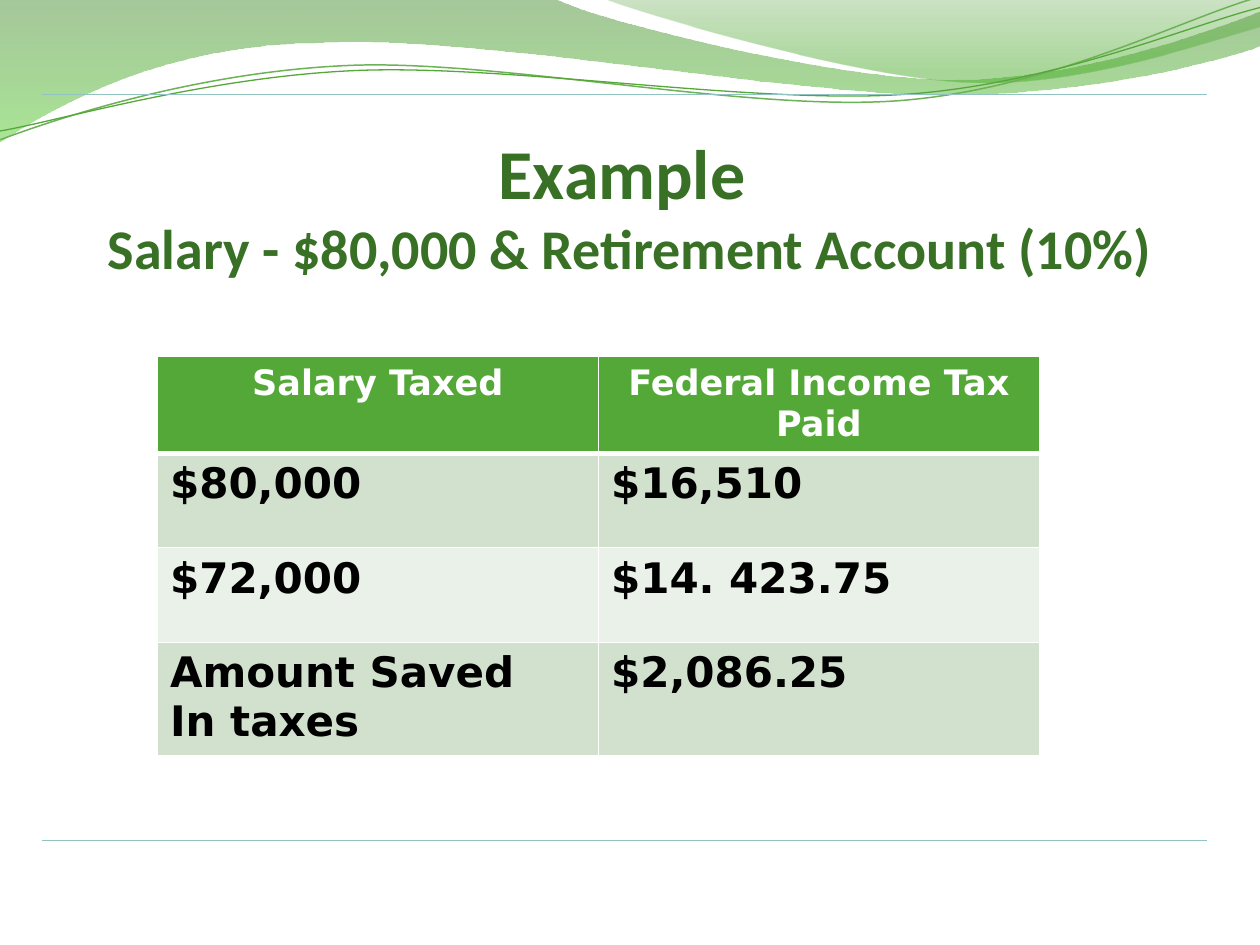
import pptx
import pptx.dml.color
import pptx.enum.shapes
import pptx.enum.text
import pptx.oxml
import pptx.oxml.ns
import pptx.util
from pptx.util import Inches

RGBColor = pptx.dml.color.RGBColor
WHITE = RGBColor(0xFF, 0xFF, 0xFF)
BLACK = RGBColor(0x00, 0x00, 0x00)
TITLE_GREEN = RGBColor(0x38, 0x70, 0x25)
HEADER_GREEN = RGBColor(0x54, 0xA8, 0x38)
PALE_GREEN = RGBColor(0xD1, 0xE1, 0xCE)
PALEST_GREEN = RGBColor(0xE9, 0xF1, 0xE8)
SOFT_GREEN = RGBColor(0x6D, 0xB2, 0x56)
RULE_TEAL = RGBColor(0x91, 0xC3, 0xC1)
WAVE_DARK = RGBColor(0x3A, 0x85, 0x21)
WAVE_LIGHT = RGBColor(0x64, 0xD1, 0x3F)
CREST_TOP = RGBColor(0x56, 0xA1, 0x3D)
CREST_BOTTOM = RGBColor(0x40, 0xA8, 0x1E)

CENTER = pptx.enum.text.PP_ALIGN.CENTER
LEFT = pptx.enum.text.PP_ALIGN.LEFT
NAMESPACE = pptx.oxml.ns.nsdecls("a")

deck = pptx.Presentation()
deck.slide_width, deck.slide_height = Inches(10), Inches(7.5)
page = deck.slides.add_slide(deck.slide_layouts[6])


def add_outline(start, segments, close):
    """Draw two-number segments as lines and six-number ones as Bezier curves."""
    corners = [(Inches(segment[i]), Inches(segment[i + 1]))
               for segment in segments for i in range(0, len(segment), 2)]
    builder = page.shapes.build_freeform(Inches(start[0]), Inches(start[1]))
    builder.add_line_segments(corners, close=close)
    outline = builder.convert_to_shape()
    outline.shadow.inherit = False
    # Merge the three points of each curve into one Bezier command
    steps = iter(outline.element.spPr.findall(".//" + pptx.oxml.ns.qn("a:lnTo")))
    for segment in segments:
        step = next(steps)
        if len(segment) == 6:
            curve = pptx.oxml.parse_xml(f"<a:cubicBezTo {NAMESPACE}/>")
            step.addprevious(curve)
            for point in (step, next(steps), next(steps)):
                curve.append(point[0])
                point.getparent().remove(point)
    return outline


# Translucent waves across the top
waves = [
    ((0, -0.01),
     [(4.4, -0.01), (4.76, 0.17, 6.64, 0.63, 7.58, 0.63),
      (8.53, 0.63, 9.58, 0.26, 10, 0.09), (10.01, 0.36),
      (9.83, 0.44, 8.7, 0.76, 7.46, 0.75), (6.22, 0.75, 3.82, 0.28, 2.57, 0.34),
      (1.29, 0.35, 0.46, 0.83, -0.01, 1.13)],
     [(0, WAVE_DARK, 45), (1, WAVE_LIGHT, 55)]),
    ((4.79, -0.01),
     [(5.09, 0.11, 6.82, 0.62, 7.69, 0.65), (8.56, 0.69, 9.61, 0.32, 10, 0.21),
      (10, 0)],
     [(0, CREST_TOP, 30), (0.8, CREST_BOTTOM, 45)]),
]
for start, segments, stops in waves:
    wave = add_outline(start, segments, True)
    wave.line.fill.background()
    wave.fill.gradient()
    wave.fill.gradient_angle = 270
    for stop, (position, color, opacity) in zip(wave.fill.gradient_stops, stops):
        stop.position = position
        stop.color.rgb = color
    tags = wave.element.spPr.findall(".//" + pptx.oxml.ns.qn("a:srgbClr"))
    for tag, (position, color, opacity) in zip(tags, stops):
        tag.append(pptx.oxml.parse_xml(f'<a:alpha {NAMESPACE} val="{opacity * 1000}"/>'))

# Thin curves that follow the waves
threads = [
    ((0, 1.11),
     [(0.48, 0.93, 1.58, 0.57, 2.77, 0.52), (3.95, 0.47, 5.93, 0.89, 7.13, 0.8),
      (8.33, 0.71, 9.38, 0.15, 9.98, -0.02)], SOFT_GREEN, 0.85),
    ((0, 1.04),
     [(0.47, 0.96, 1.64, 0.61, 2.83, 0.56), (4.03, 0.51, 5.97, 0.83, 7.17, 0.75),
      (8.36, 0.67, 9.41, 0.21, 10, 0.06)], HEADER_GREEN, 0.75),
]
for start, segments, color, weight in threads:
    thread = add_outline(start, segments, False)
    thread.fill.background()
    thread.line.color.rgb = color
    thread.line.width = pptx.util.Pt(weight)

# Horizontal rules
for top in (6.67, 0.75):
    rule = page.shapes.add_connector(pptx.enum.shapes.MSO_CONNECTOR.STRAIGHT,
                                     Inches(9.58), Inches(top), Inches(0.33), Inches(top))
    rule.line.color.rgb = RULE_TEAL
    rule.line.width = pptx.util.Pt(0.75)
    rule.element.spPr.append(pptx.oxml.parse_xml(f"<a:effectLst {NAMESPACE}/>"))

# Title
title = page.shapes.add_textbox(Inches(0.5), Inches(0.98), Inches(9), Inches(1.25))
frame = title.text_frame
frame.word_wrap = True
frame.vertical_anchor = pptx.enum.text.MSO_ANCHOR.BOTTOM
frame.margin_left = frame.margin_top = frame.margin_right = frame.margin_bottom = 0
para = frame.paragraphs[0]
para.alignment = CENTER
for index, (text, size) in enumerate([("Example ", 40),
                                      ("Salary - $80,000 & Retirement Account (10%)", 32)]):
    if index:
        para.add_line_break()
    span = para.add_run()
    span.text = text
    span.font.name = "Calibri"
    span.font.size = pptx.util.Pt(size)
    span.font.bold = True
    span.font.color.rgb = TITLE_GREEN

# Tax table
rows = [
    (0.73, HEADER_GREEN, ["Salary Taxed", "Federal Income Tax Paid"]),
    (0.75, PALE_GREEN, ["$80,000", "$16,510"]),
    (0.75, PALEST_GREEN, ["$72,000", "$14. 423.75"]),
    (0.9, PALE_GREEN, ["Amount Saved\nIn taxes", "$2,086.25"]),
]
table = page.shapes.add_table(len(rows), 2, Inches(1.25), Inches(2.83),
                              Inches(7), Inches(3.13)).table
for column in table.columns:
    column.width = Inches(3.5)
for row_index, (height, fill, texts) in enumerate(rows):
    table.rows[row_index].height = Inches(height)
    is_header = row_index == 0
    for column_index, text in enumerate(texts):
        cell = table.cell(row_index, column_index)
        frame = cell.text_frame
        for line_index, line in enumerate(text.split("\n")):
            para = frame.add_paragraph() if line_index else frame.paragraphs[0]
            para.alignment = CENTER if is_header else LEFT
            span = para.add_run()
            span.text = line
            span.font.name = "DejaVu Sans"
            span.font.size = pptx.util.Pt(20 if is_header else 24)
            span.font.bold = True
            span.font.color.rgb = WHITE if is_header else BLACK
        # Borders come before the fill in the cell properties
        properties = cell._tc.get_or_add_tcPr()
        for side in ("L", "R", "T", "B"):
            heavy = (is_header and side == "B") or (row_index == 1 and side == "T")
            weight = pptx.util.Pt(3 if heavy else 1)
            properties.append(pptx.oxml.parse_xml(
                f'<a:ln{side} {NAMESPACE} w="{weight}"><a:solidFill>'
                f'<a:srgbClr val="{WHITE}"/></a:solidFill></a:ln{side}>'))
        cell.fill.solid()
        cell.fill.fore_color.rgb = fill

deck.save("out.pptx")
